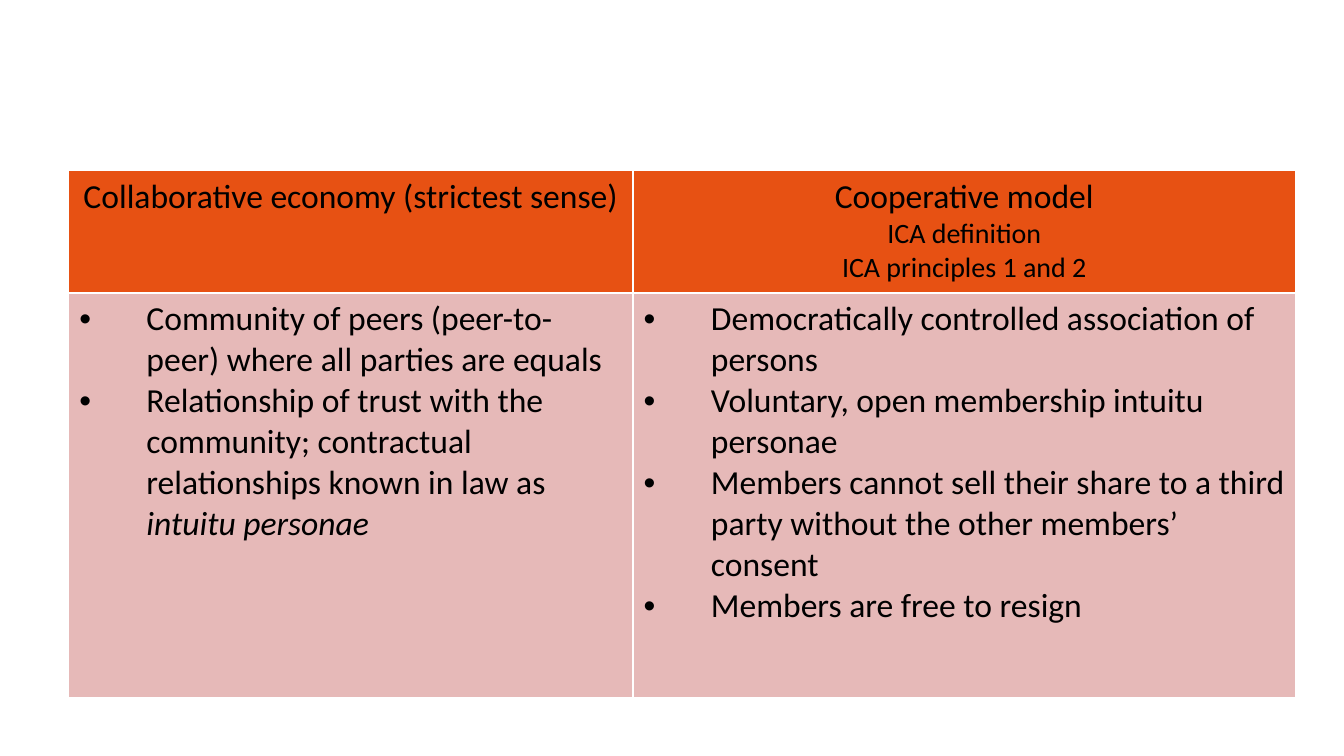
from lxml.etree import SubElement
from pptx import Presentation
from pptx.dml.color import RGBColor
from pptx.enum.text import PP_ALIGN as Align
from pptx.oxml.ns import qn
from pptx.util import Inches, Pt

HEADER_FILL, BODY_FILL = "E75113", "E6B9B8"

HEADINGS = [
    [("Collaborative economy (strictest sense)", 18)],
    [("Cooperative model", 18), ("ICA definition", 15),
     ("ICA principles 1 and 2", 15)],
]
# Each point is a list of (text, italic) pieces
POINTS = [
    [
        [("Community of peers (peer-to-peer) where all parties are equals", False)],
        [("Relationship of trust with the community; contractual "
          "relationships known in law as ", False),
         ("intuitu personae", True)],
    ],
    [
        [("Democratically controlled association of persons", False)],
        [("Voluntary, open membership intuitu personae", False)],
        [("Members cannot sell their share to a third party without "
          "the other members’ consent", False)],
        [("Members are free to resign", False)],
    ],
]


def color(hex_value):
    return RGBColor.from_string(hex_value)


def add_text(paragraph, text, size=18, italic=False, font="Calibri", ink="000000"):
    run = paragraph.add_run()
    run.text = text
    run.font.name = font
    run.font.size = Pt(size)
    run.font.bold = False
    run.font.italic = italic
    run.font.color.rgb = color(ink)


class ComparisonSlide:
    border = "FFFFFF"
    border_width = Pt(1)
    indent = Inches(0.5)

    def __init__(self, deck):
        self.slide = deck.slides.add_slide(deck.slide_layouts[6])

    def table(self, left, top, widths, heights):
        frame = self.slide.shapes.add_table(
            len(heights), len(widths), Inches(left), Inches(top),
            Inches(sum(widths)), Inches(sum(heights)))
        for column, width in zip(frame.table.columns, widths):
            column.width = Inches(width)
        for row, height in zip(frame.table.rows, heights):
            row.height = Inches(height)
        return frame.table

    def style_cell(self, cell, fill):
        cell.margin_left = cell.margin_right = Inches(0.08)
        cell.margin_top = cell.margin_bottom = Inches(0.04)
        properties = cell._tc.get_or_add_tcPr()
        for side in "LRTB":
            line = SubElement(properties, qn(f"a:ln{side}"), w=str(self.border_width))
            solid = SubElement(line, qn("a:solidFill"))
            SubElement(solid, qn("a:srgbClr"), val=self.border)
        cell.fill.solid()
        cell.fill.fore_color.rgb = color(fill)

    def paragraphs(self, cell, count):
        frame = cell.text_frame
        return [frame.paragraphs[0]] + [frame.add_paragraph() for _ in range(count - 1)]

    def heading(self, cell, lines):
        self.style_cell(cell, HEADER_FILL)
        for paragraph, (text, size) in zip(self.paragraphs(cell, len(lines)), lines):
            paragraph.alignment = Align.CENTER
            add_text(paragraph, text, size=size)

    def bullets(self, cell, points):
        self.style_cell(cell, BODY_FILL)
        for paragraph, pieces in zip(self.paragraphs(cell, len(points)), points):
            properties = paragraph._p.get_or_add_pPr()
            properties.set("marL", str(self.indent))
            properties.set("indent", str(-self.indent))
            SubElement(properties, qn("a:buFont"), typeface="Arial")
            SubElement(properties, qn("a:buChar"), char="•")
            for text, italic in pieces:
                add_text(paragraph, text, italic=italic)


def main():
    # Widescreen page, 16:9
    deck = Presentation()
    deck.slide_width, deck.slide_height = Inches(10), Inches(10 * 9 / 16)
    page = ComparisonSlide(deck)

    # One column per model: heading above, bullet points below
    comparison = page.table(0.51, 1.27, widths=[4.2, 4.93], heights=[0.91, 3.01])
    for column, (lines, points) in enumerate(zip(HEADINGS, POINTS)):
        page.heading(comparison.cell(0, column), lines)
        page.bullets(comparison.cell(1, column), points)

    deck.save("out.pptx")


if __name__ == "__main__":
    main()
